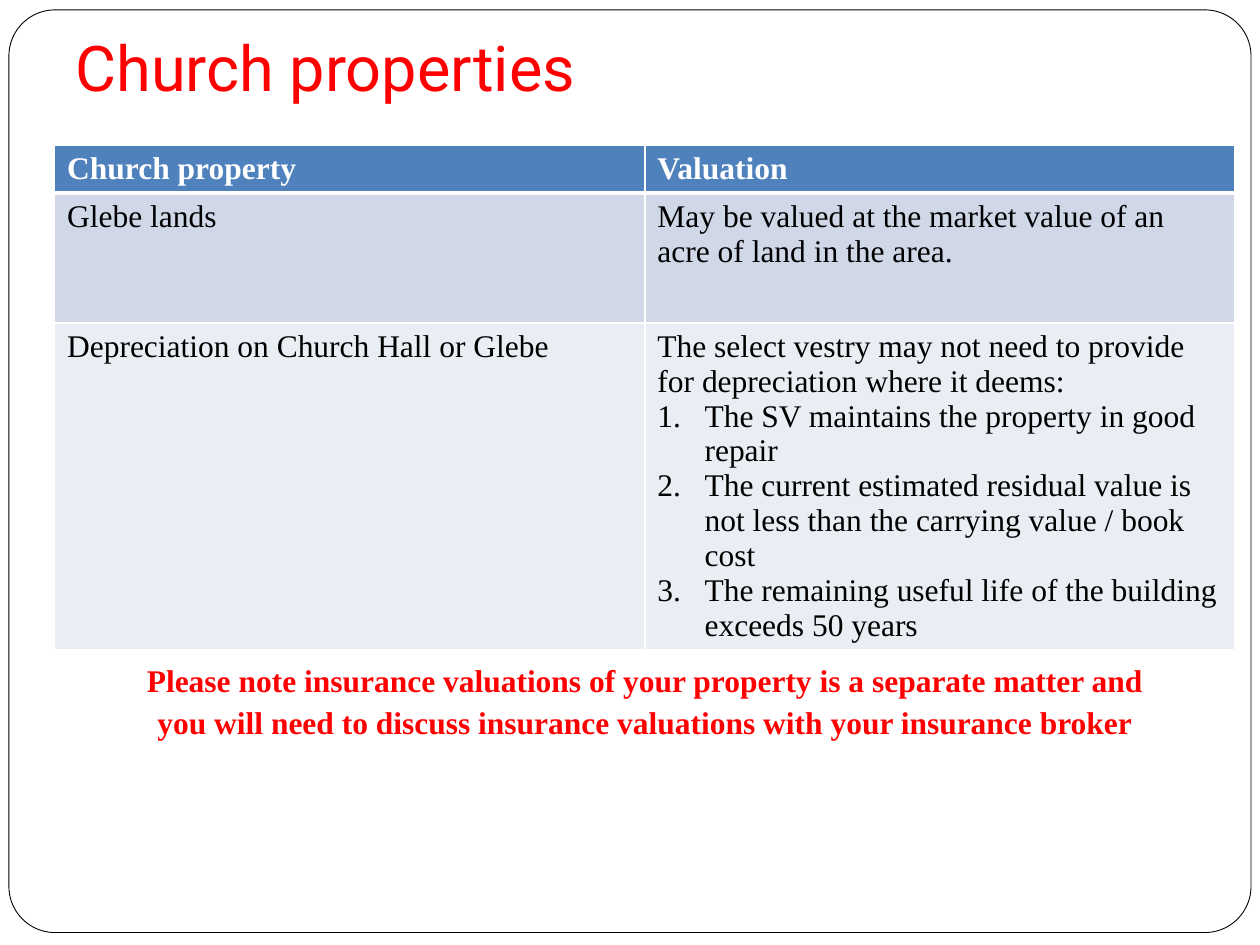
import pptx
import pptx.dml.color
import pptx.enum.shapes
import pptx.enum.text
import pptx.oxml
import pptx.oxml.ns
import pptx.util
from pptx.util import Cm

COLOURS = {
    "white": "FFFFFF",
    "black": "000000",
    "red": "FF0000",
    "header": "4F81BD",
    "band_dark": "D0D8E8",
    "band_light": "E9EDF4",
}
BODY_FONT = "Times New Roman"
BODY_SIZE = 18


def colour(name):
    return pptx.dml.color.RGBColor.from_string(COLOURS[name])


class SlideBuilder:
    def __init__(self, deck):
        self.slide = deck.slides.add_slide(deck.slide_layouts[5])

    def style(self, para, colour_name, bold=False, name=BODY_FONT, size=BODY_SIZE):
        font = para.font
        font.name = name
        font.size = pptx.util.Pt(size)
        font.bold = bold
        font.color.rgb = colour(colour_name)

    def frame(self, left, top, width, height):
        shape = self.slide.shapes.add_shape(
            pptx.enum.shapes.MSO_SHAPE.ROUNDED_RECTANGLE, left, top, width, height
        )
        shape.adjustments[0] = 0.05
        shape.shadow.inherit = False
        shape.fill.solid()
        shape.fill.fore_color.rgb = colour("white")
        shape.line.color.rgb = colour("black")
        shape.line.width = pptx.util.Pt(0.5)
        shape.element.getparent().insert(2, shape.element)

    def title(self, text, left, top, width, height):
        box = self.slide.shapes.title
        box.left, box.top, box.width, box.height = left, top, width, height
        text_frame = box.text_frame
        text_frame.text = text
        text_frame.auto_size = pptx.enum.text.MSO_AUTO_SIZE.NONE
        text_frame.vertical_anchor = pptx.enum.text.MSO_ANCHOR.BOTTOM
        text_frame.margin_bottom = Cm(0.25)
        para = text_frame.paragraphs[0]
        para.alignment = pptx.enum.text.PP_ALIGN.LEFT
        self.style(para, "red", name="Roboto", size=36)

    def note(self, text, left, top, width, height):
        box = self.slide.shapes.add_textbox(left, top, width, height)
        box.text_frame.word_wrap = True
        para = box.text_frame.paragraphs[0]
        para.text = text
        para.alignment = pptx.enum.text.PP_ALIGN.CENTER
        para.line_spacing = 1.1
        self.style(para, "red", bold=True)

    def number(self, para):
        properties = para._p.get_or_add_pPr()
        indent = Cm(0.95)
        properties.set("marL", str(indent))
        properties.set("indent", str(-indent))
        bullet = pptx.oxml.parse_xml(
            f'<a:buAutoNum {pptx.oxml.ns.nsdecls("a")} type="arabicPeriod"/>'
        )
        properties.insert_element_before(bullet, "a:tabLst", "a:defRPr", "a:extLst")

    def borders(self, cell, top, bottom):
        properties = cell._tc.get_or_add_tcPr()
        widths = {"lnL": 1, "lnR": 1, "lnT": top, "lnB": bottom}
        for position, (side, width) in enumerate(widths.items()):
            line = pptx.oxml.parse_xml(
                f'<a:{side} {pptx.oxml.ns.nsdecls("a")} w="{pptx.util.Pt(width)}">'
                f'<a:solidFill><a:srgbClr val="{COLOURS["white"]}"/></a:solidFill>'
                f"</a:{side}>"
            )
            properties.insert(position, line)

    def table(self, rows, heights, fills, left, top, width):
        table = self.slide.shapes.add_table(
            len(rows), len(rows[0]), left, top, width, sum(heights)
        ).table
        for row_index, row in enumerate(rows):
            table.rows[row_index].height = heights[row_index]
            is_header = row_index == 0
            for column_index, lines in enumerate(row):
                cell = table.cell(row_index, column_index)
                cell.fill.solid()
                cell.fill.fore_color.rgb = colour(fills[row_index])
                self.borders(
                    cell, 3 if row_index == 1 else 1, 3 if is_header else 1
                )
                cell.text = "\n".join(lines)
                for line_index, para in enumerate(cell.text_frame.paragraphs):
                    self.style(para, "white" if is_header else "black", is_header)
                    if line_index:
                        self.number(para)


def main():
    deck = pptx.Presentation()
    deck.slide_width, deck.slide_height = Cm(25.4), Cm(19.05)
    page = SlideBuilder(deck)
    page.frame(Cm(0.18), Cm(0.2), Cm(25.04), Cm(18.6))
    page.title("Church properties", Cm(1.27), Cm(0.89), Cm(20.12), Cm(1.45))
    rows = [
        [["Church property"], ["Valuation"]],
        [
            ["Glebe lands"],
            ["May be valued at the market value of an acre of land in the area."],
        ],
        [
            ["Depreciation on Church Hall or Glebe"],
            [
                "The select vestry may not need to provide for depreciation where it deems:",
                "The SV maintains the property in good repair",
                "The current estimated residual value is not less than the carrying value / book cost",
                "The remaining useful life of the building exceeds 50 years",
            ],
        ],
    ]
    page.table(
        rows,
        [Cm(0.93), Cm(2.62), Cm(6.58)],
        ["header", "band_dark", "band_light"],
        Cm(1.1),
        Cm(2.93),
        Cm(23.8),
    )
    page.note(
        "Please note insurance valuations of your property is a separate matter and "
        "you will need to discuss insurance valuations with your insurance broker",
        Cm(2.21),
        Cm(13.13),
        Cm(21.59),
        Cm(1.8),
    )
    deck.save("out.pptx")


if __name__ == "__main__":
    main()
